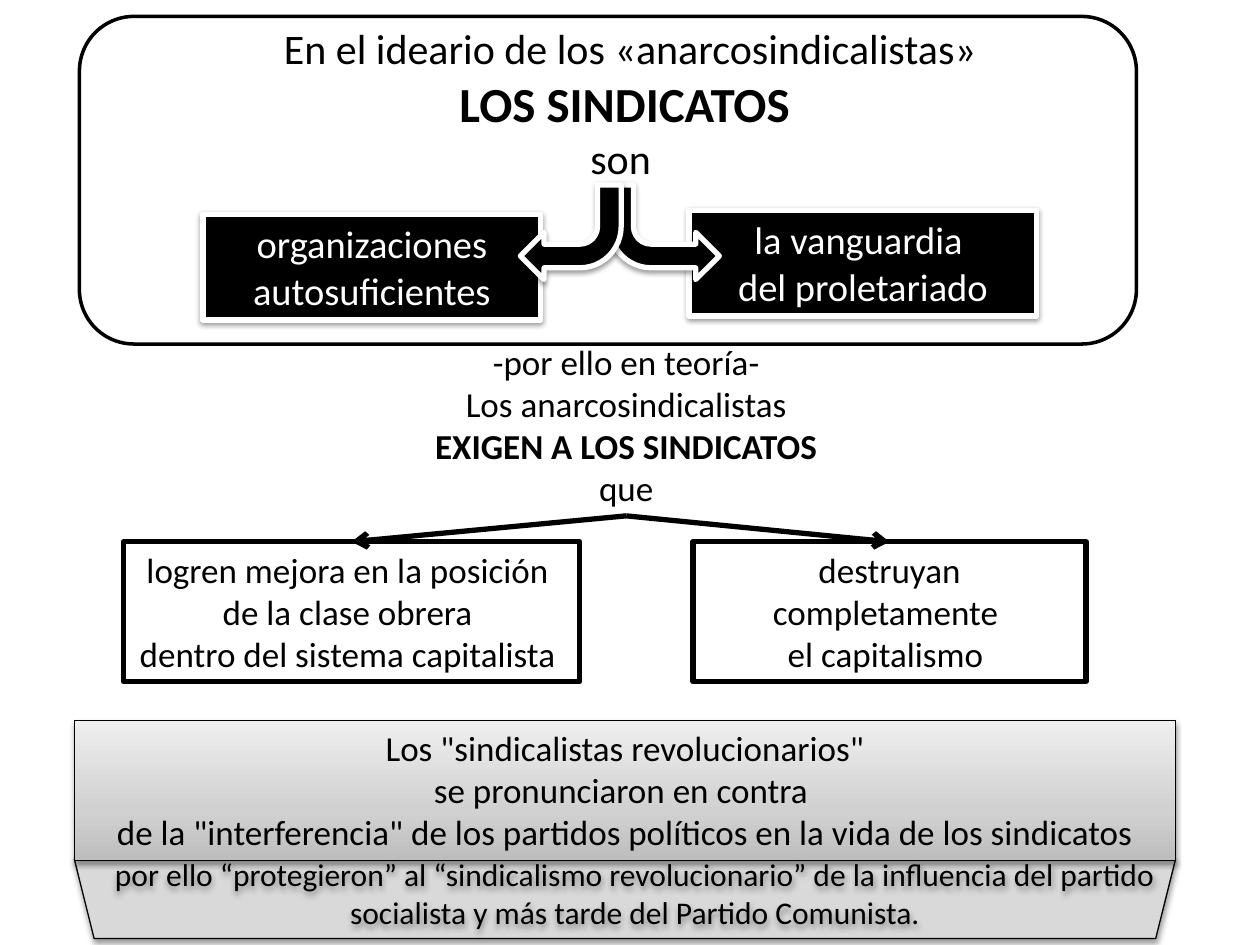
from copy import deepcopy

from lxml import etree
from pptx import Presentation
from pptx.dml.color import RGBColor
from pptx.enum.shapes import MSO_CONNECTOR, MSO_SHAPE
from pptx.enum.text import MSO_ANCHOR, MSO_AUTO_SIZE, PP_ALIGN
from pptx.oxml.ns import qn
from pptx.util import Pt

RECT, ROUND_RECT = MSO_SHAPE.RECTANGLE, MSO_SHAPE.ROUNDED_RECTANGLE
TRAPEZOID, BENT_ARROW = MSO_SHAPE.TRAPEZOID, MSO_SHAPE.BENT_ARROW
STRAIGHT = MSO_CONNECTOR.STRAIGHT
CENTER = PP_ALIGN.CENTER
TOP_SITE, BOTTOM_SITE = 0, 2

COLORS = {"black": "000000", "white": "FFFFFF", "pale": "D9D9D9"}
GRAY_STOPS = [(0, "BDBDBD"), (0.35, "D1D1D1"), (1, "EEEEEE")]
FRAME_FORMAT = {
    "word_wrap": True,
    "auto_size": MSO_AUTO_SIZE.SHAPE_TO_FIT_TEXT,
    "vertical_anchor": MSO_ANCHOR.TOP,
}
SHADOW = {"blurRad": Pt(3.1), "dist": Pt(1.6), "dir": 90 * 60000, "rotWithShape": 0}


def rgb(name):
    return RGBColor.from_string(COLORS[name])


class Diagram:
    """Holds the style and the current slide."""

    font = "Calibri"

    def __init__(self, slide):
        self.slide = slide
        self.shapes = slide.shapes

    def put_lines(self, shape, lines, size, color="black"):
        """Each line is a string or a (string, format) pair."""
        frame = shape.text_frame
        for key, value in FRAME_FORMAT.items():
            setattr(frame, key, value)
        for number, line in enumerate(lines):
            words, extra = (line, {}) if isinstance(line, str) else line
            paragraph = frame.paragraphs[0] if number == 0 else frame.add_paragraph()
            paragraph.alignment = CENTER
            run = paragraph.add_run()
            run.text = words
            style = {"name": self.font, "size": Pt(size), "bold": False, **extra}
            for key, value in style.items():
                setattr(run.font, key, value)
            run.font.color.rgb = rgb(color)

    def shadow(self, shape):
        shape.shadow.inherit = False
        effects = shape._element.spPr.find(qn("a:effectLst"))
        outer = etree.SubElement(effects, qn("a:outerShdw"))
        for key, value in SHADOW.items():
            outer.set(key, str(int(value)))
        tint = etree.SubElement(outer, qn("a:srgbClr"), val=COLORS["black"])
        etree.SubElement(tint, qn("a:alpha"), val="38000")

    def title(self, place, lines, size):
        title = self.shapes.title
        for key, value in zip(("left", "top", "width", "height"), place):
            setattr(title, key, Pt(value))
        self.put_lines(title, lines, size)
        # Bring the title in front of the frame behind it
        self.shapes._spTree.append(title._element)

    def text(self, place, lines, size, shadow=False):
        box = self.shapes.add_textbox(*map(Pt, place))
        self.put_lines(box, lines, size)
        if shadow:
            self.shadow(box)
        return box

    def shape(self, kind, place, fill=None, line="black", weight=3, flips=(), shadow=False):
        shape = self.shapes.add_shape(kind, *map(Pt, place))
        shape.shadow.inherit = False
        if fill:
            shape.fill.solid()
            shape.fill.fore_color.rgb = rgb(fill)
        else:
            shape.fill.background()
        shape.line.color.rgb = rgb(line)
        shape.line.width = Pt(weight)
        for flip in flips:
            shape._element.spPr.xfrm.set(flip, "1")
        if shadow:
            self.shadow(shape)
        return shape

    def gradient(self, shape, stops):
        shape.fill.gradient()
        shape.fill.gradient_angle = 90
        stop_list = shape._element.spPr.find(qn("a:gradFill")).find(qn("a:gsLst"))
        while len(stop_list) < len(stops):
            stop_list.append(deepcopy(stop_list[0]))
        for stop, (position, color) in zip(shape.fill.gradient_stops, stops):
            stop.position = position
            stop.color.rgb = RGBColor.from_string(color)

    def arrow(self, source, target):
        arrow = self.shapes.add_connector(STRAIGHT, 0, 0, 0, 0)
        arrow.begin_connect(source, BOTTOM_SITE)
        arrow.end_connect(target, TOP_SITE)
        arrow.line.color.rgb = rgb("black")
        arrow.line.width = Pt(3)
        outline = arrow._element.spPr.find(qn("a:ln"))
        etree.SubElement(outline, qn("a:tailEnd"), type="arrow")
        etree.SubElement(arrow._element.spPr, qn("a:effectLst"))


def main():
    deck = Presentation()
    deck.slide_width, deck.slide_height = Pt(720), Pt(540)
    diagram = Diagram(deck.slides.add_slide(deck.slide_layouts[5]))
    left, width = 42.5, 629.3

    # Backgrounds
    diagram.shape(TRAPEZOID, (left, 491, width, 45.4), "pale", weight=0.75,
                  flips=["flipV"], shadow=True)
    diagram.shape(ROUND_RECT, (45.4, 9.4, 604, 187.2), "white", weight=2)

    # Heading and the demand that follows from it
    diagram.title((45.4, 9.4, width, 99.4), [
        "En el ideario de los «anarcosindicalistas»",
        ("LOS SINDICATOS ", {"size": Pt(28), "bold": True}),
        "son  ",
    ], 24)
    demand = diagram.text((43.2, 190.8, width, 104), [
        "-por ello en teoría-",
        "Los anarcosindicalistas",
        ("EXIGEN A LOS SINDICATOS", {"bold": True}),
        "que",
    ], 20)

    # What the unions are
    for place, lines in [
        ((116, 122.4, 193, 60.5), ["organizaciones autosuficientes"]),
        ((393.8, 120.2, 198.7, 60.5), ["la vanguardia ", "del proletariado"]),
    ]:
        role = diagram.shape(RECT, place, "black", "white", shadow=True)
        diagram.put_lines(role, lines, 22, "white")

    # Closing statement
    statement = diagram.shape(RECT, (left, 411.8, width, 79.9), weight=0.75, shadow=True)
    diagram.gradient(statement, GRAY_STOPS)
    diagram.put_lines(statement, [
        " Los \"sindicalistas revolucionarios\" ",
        "se pronunciaron en contra ",
        "de la \"interferencia\" de los partidos políticos en la vida de los sindicatos",
    ], 20)

    # What is demanded of the unions
    goals = []
    for goal_left, goal_width, lines in [
        (70.6, 260.6, ["logren mejora en la posición ", "de la clase obrera ",
                       "dentro del sistema capitalista "]),
        (396, 224.6, ["destruyan completamente ", "el capitalismo "]),
    ]:
        goal = diagram.shape(RECT, (goal_left, 309.6, goal_width, 79.9))
        diagram.put_lines(goal, lines, 20)
        goals.append(goal)

    # Arrows
    for arrow_left, arrow_width, flips in [
        (348.5, 62.6, ["flipV"]),
        (297.4, 57.6, ["flipH", "flipV"]),
    ]:
        diagram.shape(BENT_ARROW, (arrow_left, 105.8, arrow_width, 54), "black", "white",
                      flips=flips, shadow=True)
    for goal in goals:
        diagram.arrow(demand, goal)

    # Consequence
    diagram.text((48.2, 485.3, width, 51), [
        "por ello “protegieron” al “sindicalismo revolucionario” de la influencia del "
        "partido socialista y más tarde del Partido Comunista.",
    ], 18, shadow=True)

    deck.save("out.pptx")


if __name__ == "__main__":
    main()
